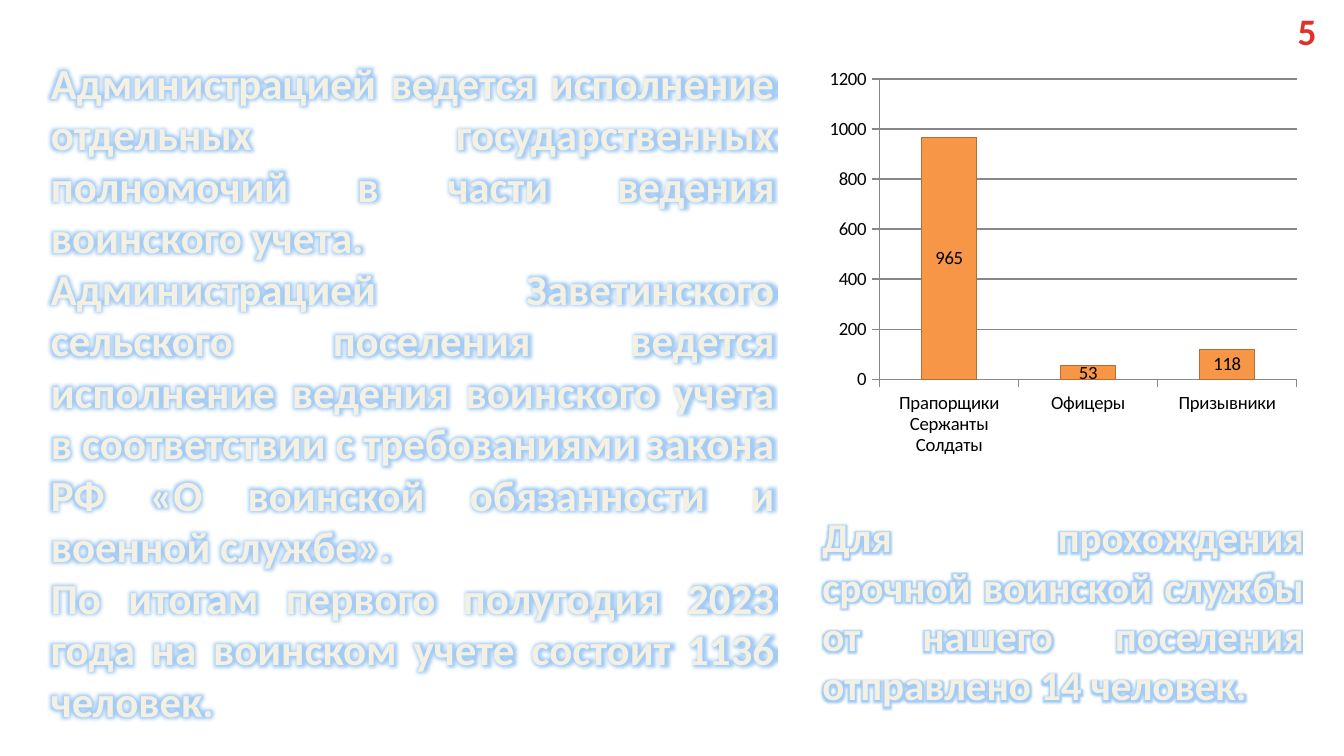
from lxml import etree
from pptx import Presentation
from pptx.chart.data import CategoryChartData
from pptx.dml.color import RGBColor
from pptx.enum import chart as charts, text
from pptx.oxml.ns import qn
from pptx.util import Inches, Pt

COLORS = {"cream": "F4F1E3", "navy": "054697", "glow": "A3CBF5", "red": "E0322D",
          "dark_red": "A2201C", "bar": "F79646", "bar_edge": "B66D31",
          "grid": "878787", "black": "000000"}
FONT = "Calibri"
DUTIES = [
    "Администрацией ведется исполнение отдельных государственных полномочий в части ведения воинского учета.",
    "Администрацией Заветинского сельского поселения ведется исполнение ведения воинского учета "
    "в соответствии с требованиями закона РФ «О воинской обязанности и военной службе». ",
    "По итогам первого полугодия 2023 года на воинском учете состоит 1136 человек.",
]
CONSCRIPTS = ["Для прохождения срочной воинской службы от нашего поселения отправлено 14 человек."]
RESERVE = {"Прапорщики\nСержанты\nСолдаты": 965, "Офицеры": 53, "Призывники": 118}
GLOWING_BOXES = [
    (DUTIES, 23, (0.28, 0.37, 5.59, 5.13)),
    (CONSCRIPTS, 22, (6.02, 3.76, 3.78, 1.58)),
]


def color(name):
    return RGBColor.from_string(COLORS[name])


def apply(target, values):
    for name, value in values.items():
        setattr(target, name, value)


def add_solid(parent, name):
    fill = etree.SubElement(parent, qn("a:solidFill"))
    etree.SubElement(fill, qn("a:srgbClr"), val=COLORS[name])


def add_glow(properties):
    outline = etree.Element(qn("a:ln"), w=str(Pt(1)))
    add_solid(outline, "navy")
    effects = etree.Element(qn("a:effectLst"))
    glow = etree.SubElement(effects, qn("a:glow"), rad=str(Pt(8)))
    etree.SubElement(glow, qn("a:srgbClr"), val=COLORS["glow"])
    properties.insert(0, outline)
    properties.find(qn("a:solidFill")).addnext(effects)


def add_box(page, paragraphs, place, size, align, wrap):
    box = page.shapes.add_textbox(*map(Inches, place))
    frame = box.text_frame
    apply(frame, {"word_wrap": wrap, "auto_size": text.MSO_AUTO_SIZE.SHAPE_TO_FIT_TEXT})
    spans = []
    for number, wording in enumerate(paragraphs):
        para = frame.add_paragraph() if number else frame.paragraphs[0]
        para.alignment = align
        span = para.add_run()
        span.text = wording
        apply(span.font, {"size": Pt(size), "bold": True, "name": FONT})
        spans.append(span)
    return spans


def add_reserve_chart(page):
    data = CategoryChartData()
    data.categories = list(RESERVE)
    data.add_series("Series 1", list(RESERVE.values()))
    chart = page.shapes.add_chart(charts.XL_CHART_TYPE.COLUMN_STACKED,
                                  *map(Inches, (6.1, 0.45, 3.62, 3)), data).chart
    apply(chart, {"has_legend": False, "has_title": False})
    apply(chart.font, {"size": Pt(10), "name": FONT})
    chart.font.color.rgb = color("black")
    for axis in (chart.category_axis, chart.value_axis):
        apply(axis, {"major_tick_mark": charts.XL_TICK_MARK.OUTSIDE,
                     "minor_tick_mark": charts.XL_TICK_MARK.NONE})
        axis.format.line.color.rgb = color("grid")
    apply(chart.value_axis, {"minimum_scale": 0, "maximum_scale": 1200, "major_unit": 200,
                             "has_major_gridlines": True})
    chart.value_axis.major_gridlines.format.line.color.rgb = color("grid")
    plot = chart.plots[0]
    apply(plot, {"gap_width": 150, "overlap": 100, "vary_by_categories": False,
                 "has_data_labels": True})
    apply(plot.data_labels, {"show_value": True, "position": charts.XL_LABEL_POSITION.CENTER})
    bars = plot.series[0].format
    bars.fill.solid()
    bars.fill.fore_color.rgb = color("bar")
    bars.line.color.rgb = color("bar_edge")


def add_page_number(page):
    span = add_box(page, ["5"], (9.55, 0.01, 0.35, 0.44), 20, text.PP_ALIGN.CENTER, False)[0]
    fill = span.font.fill
    fill.gradient()
    fill.gradient_angle = 270
    for stop, (position, name) in zip(fill.gradient_stops, [(0.25, "red"), (1, "dark_red")]):
        stop.position = position
        stop.color.rgb = color(name)
    span.font._element.set("spc", "50")


def main():
    deck = Presentation()
    width = Inches(10)
    apply(deck, {"slide_width": width, "slide_height": width * 9 // 16})
    page = deck.slides.add_slide(deck.slide_layouts[6])
    for paragraphs, size, place in GLOWING_BOXES:
        for span in add_box(page, paragraphs, place, size, text.PP_ALIGN.JUSTIFY, True):
            span.font.color.rgb = color("cream")
            add_glow(span.font._element)
    add_reserve_chart(page)
    add_page_number(page)
    deck.save("out.pptx")


if __name__ == "__main__":
    main()
